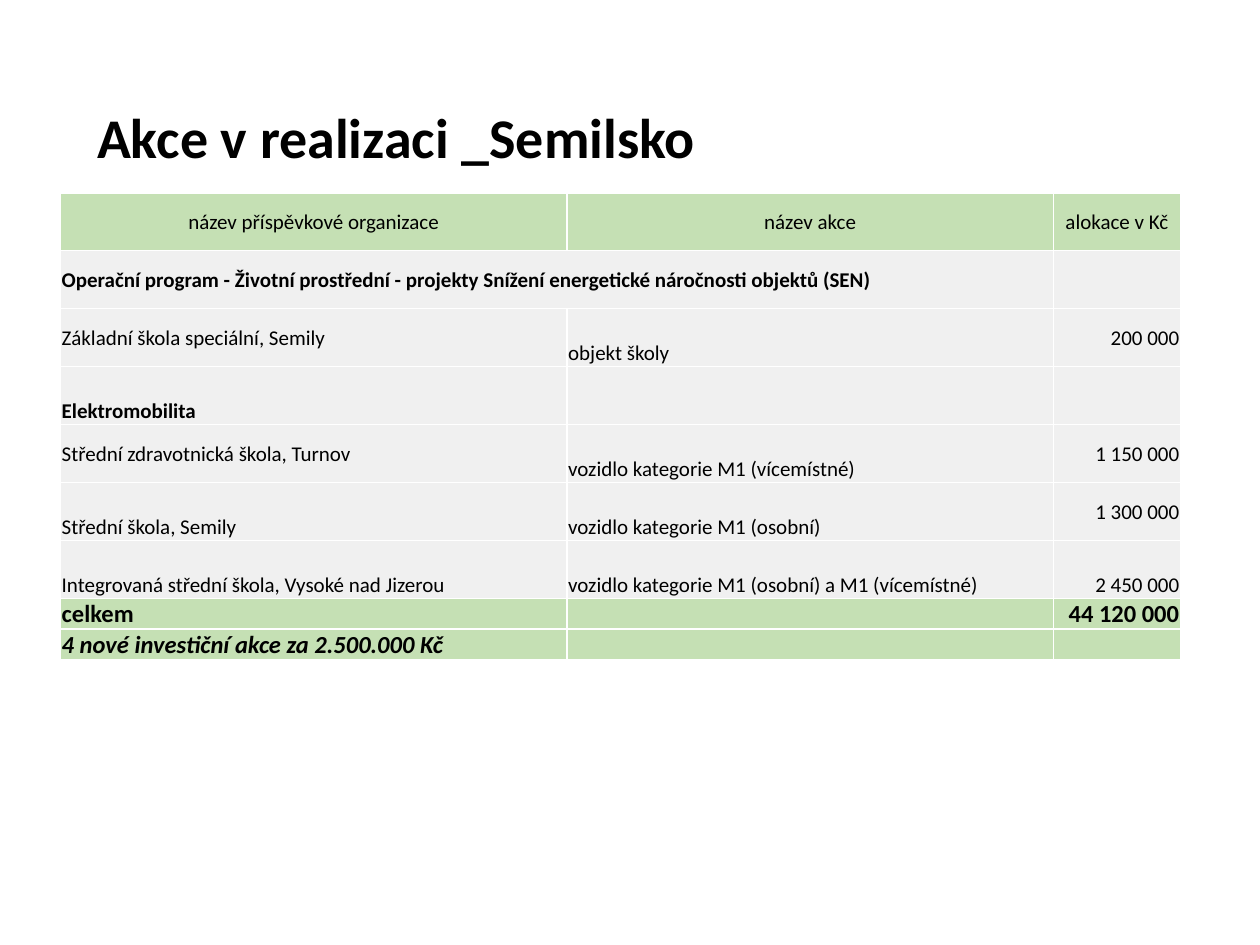
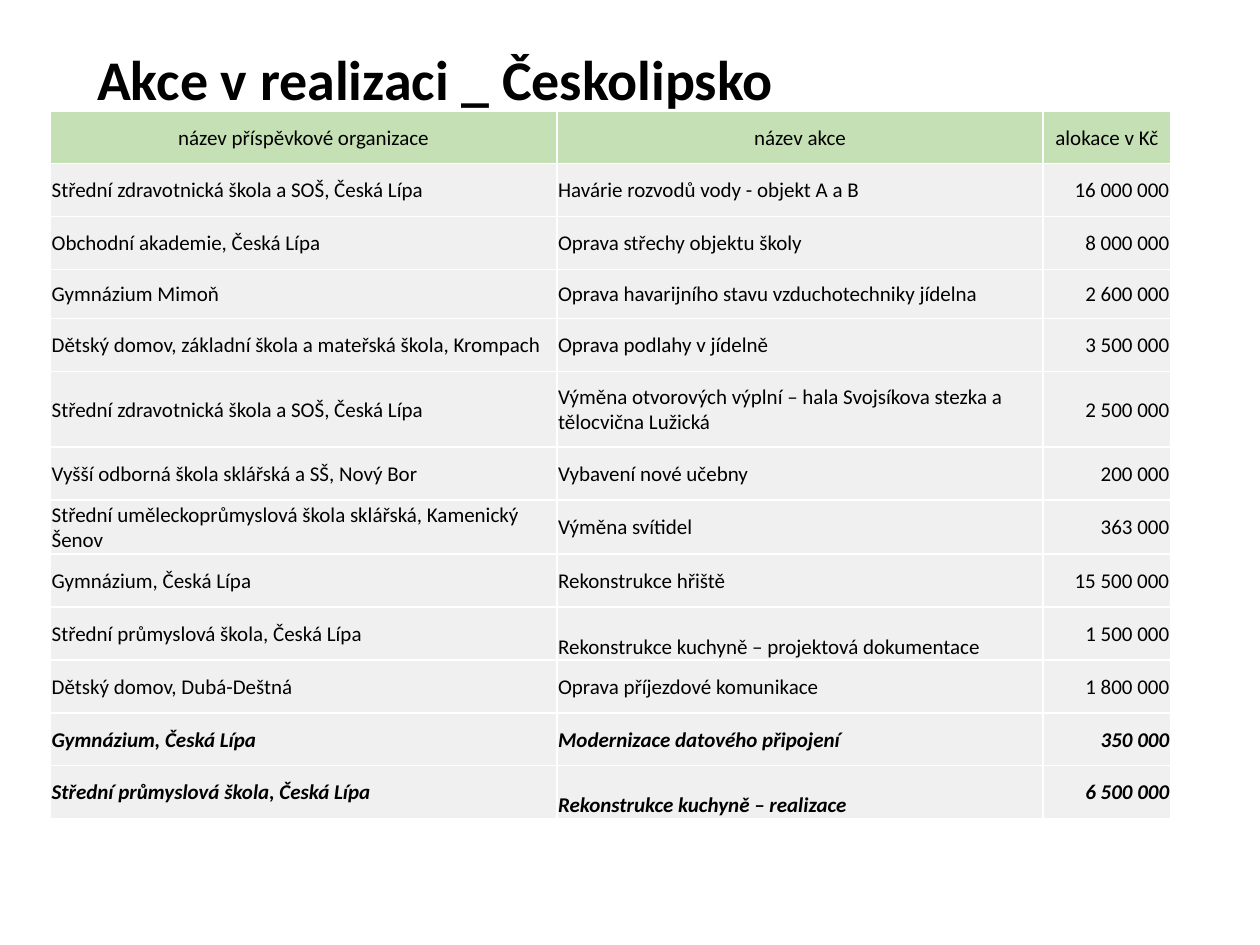
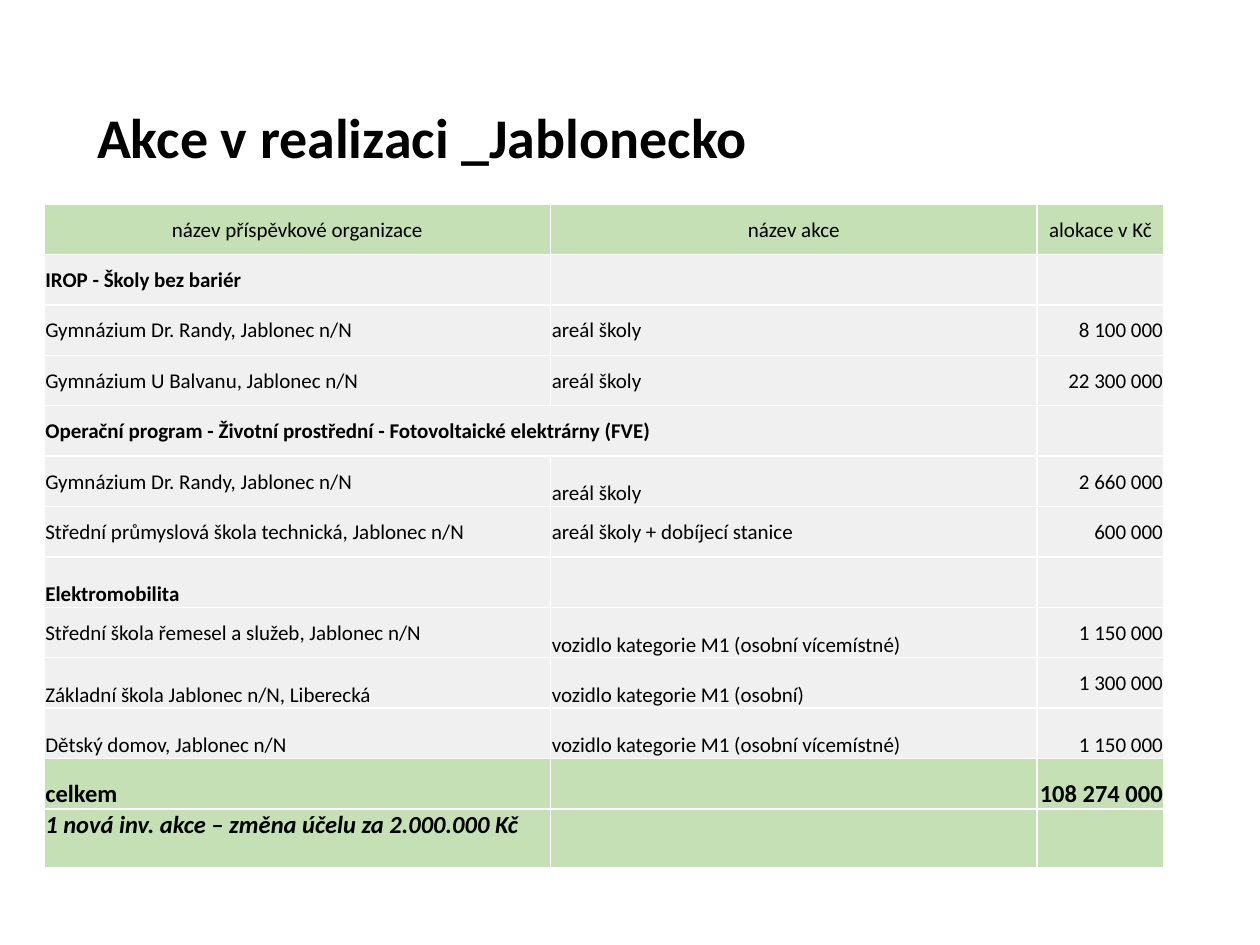
import dataclasses

import lxml.etree
import pptx
import pptx.dml.color
import pptx.enum.text
import pptx.oxml.ns
import pptx.util

Inches = pptx.util.Inches
Pt = pptx.util.Pt
Align = pptx.enum.text.PP_ALIGN
Anchor = pptx.enum.text.MSO_ANCHOR
qn = pptx.oxml.ns.qn

# Shared look
FONT = "Calibri"
GREEN, GREY, WHITE, BLACK = "C5E0B4", "F0F0F0", "FFFFFF", "000000"
COLUMNS = (4.02, 3.86, 1.01)
COLUMN_ALIGN = (Align.LEFT, Align.LEFT, Align.RIGHT)
ANCHORS = {"t": Anchor.TOP, "m": Anchor.MIDDLE, "b": Anchor.BOTTOM}
CELL_MARGINS = {
    "margin_left": Inches(0.01),
    "margin_top": Inches(0.01),
    "margin_right": Inches(0.01),
    "margin_bottom": 0,
}

# Row kinds: fill colour and font values
ROW_STYLES = {
    "head": (GREEN, {"size": Pt(12), "bold": False, "italic": False}),
    "plain": (GREY, {"size": Pt(12), "bold": False, "italic": False}),
    "section": (GREY, {"size": Pt(12), "bold": True, "italic": False}),
    "new": (GREY, {"size": Pt(12), "bold": True, "italic": True}),
    "total": (GREEN, {"size": Pt(14), "bold": True, "italic": False}),
    "note": (GREEN, {"size": Pt(14), "bold": True, "italic": True}),
}


@dataclasses.dataclass
class Row:
    organisation: str
    project: str = ""
    amount: str = ""
    anchors: str = "mmm"
    kind: str = "plain"
    height: float = 0
    wide: bool = False


HEAD = Row("název příspěvkové organizace", "název akce", "alokace v Kč", kind="head")

SEMILSKO = [
    HEAD,
    Row("Operační program - Životní prostřední - projekty Snížení energetické "
        "náročnosti objektů (SEN)", kind="section", wide=True),
    Row("Základní škola speciální, Semily", "objekt školy", "200 000", "mbm"),
    Row("Elektromobilita", anchors="bbb", kind="section"),
    Row("Střední zdravotnická škola, Turnov", "vozidlo kategorie M1 (vícemístné)",
        "1 150 000", "mbm"),
    Row("Střední škola, Semily", "vozidlo kategorie M1 (osobní)", "1 300 000", "bbm"),
    Row("Integrovaná střední škola, Vysoké nad Jizerou",
        "vozidlo kategorie M1 (osobní) a M1 (vícemístné)", "2 450 000", "bbb"),
    Row("celkem", "", "44 120 000", "bbb", "total", 0.24),
    Row("4 nové investiční akce za 2.500.000 Kč", "", "", "bbb", "note", 0.24),
]

CESKOLIPSKO = [
    HEAD,
    Row("Střední zdravotnická škola a SOŠ, Česká Lípa",
        "Havárie rozvodů vody - objekt A a B", "16 000 000"),
    Row("Obchodní akademie, Česká Lípa", "Oprava střechy objektu školy", "8 000 000"),
    Row("Gymnázium Mimoň", "Oprava havarijního stavu vzduchotechniky jídelna",
        "2 600 000", height=0.39),
    Row("Dětský domov, základní škola a mateřská škola, Krompach",
        "Oprava podlahy v jídelně", "3 500 000"),
    Row("Střední zdravotnická škola a SOŠ, Česká Lípa",
        "Výměna otvorových výplní – hala Svojsíkova stezka a tělocvična Lužická",
        "2 500 000", height=0.6),
    Row("Vyšší odborná škola sklářská a SŠ, Nový Bor", "Vybavení nové učebny", "200 000"),
    Row("Střední uměleckoprůmyslová škola sklářská, Kamenický Šenov",
        "Výměna svítidel", "363 000", height=0.43),
    Row("Gymnázium, Česká Lípa", "Rekonstrukce hřiště", "15 500 000"),
    Row("Střední průmyslová škola, Česká Lípa",
        "Rekonstrukce kuchyně – projektová dokumentace", "1 500 000", "mbm"),
    Row("Dětský domov, Dubá-Deštná", "Oprava příjezdové komunikace", "1 800 000"),
    Row("Gymnázium, Česká Lípa", "Modernizace datového připojení", "350 000", kind="new"),
    Row("Střední průmyslová škola, Česká Lípa", "Rekonstrukce kuchyně – realizace",
        "6 500 000", "mbm", "new"),
]

JABLONECKO = [
    HEAD,
    Row("IROP - Školy bez bariér", kind="section"),
    Row("Gymnázium Dr. Randy, Jablonec n/N", "areál školy", "8 100 000"),
    Row("Gymnázium U Balvanu, Jablonec n/N", "areál školy", "22 300 000"),
    Row("Operační program - Životní prostřední - Fotovoltaické elektrárny (FVE)",
        kind="section", wide=True),
    Row("Gymnázium Dr. Randy, Jablonec n/N", "areál školy", "2 660 000", "mbm"),
    Row("Střední průmyslová škola technická, Jablonec n/N",
        "areál školy + dobíjecí stanice", "600 000"),
    Row("Elektromobilita", anchors="bbb", kind="section"),
    Row("Střední škola řemesel a služeb, Jablonec n/N",
        "vozidlo kategorie M1 (osobní vícemístné)", "1 150 000", "mbm"),
    Row("Základní škola Jablonec n/N, Liberecká", "vozidlo kategorie M1 (osobní)",
        "1 300 000", "bbm"),
    Row("Dětský domov, Jablonec n/N", "vozidlo kategorie M1 (osobní vícemístné)",
        "1 150 000", "bbb"),
    Row("celkem", "", "108 274 000", "bbb", "total"),
    Row("1 nová inv. akce – změna účelu za 2.000.000 Kč", "", "", "ttt", "note", 0.47),
]

# Title, title top, table left and top, usual row height, rows
SLIDES = [
    ("Akce v realizaci _Semilsko", 0.76, (0.48, 1.53), 0.46, SEMILSKO),
    ("Akce v realizaci _ Českolipsko", 0.3, (0.4, 0.88), 0.42, CESKOLIPSKO),
    ("Akce v realizaci _Jablonecko", 0.76, (0.35, 1.62), 0.4, JABLONECKO),
]


def apply(target, values):
    for name, value in values.items():
        setattr(target, name, value)


def paint(color_format, color):
    color_format.rgb = pptx.dml.color.RGBColor.from_string(color)


def add_title(slide, text, top):
    title = slide.shapes.title
    apply(title, {"left": Inches(0.67), "top": Inches(top),
                  "width": Inches(8.35), "height": Inches(0.64)})
    frame = title.text_frame
    frame.text = text
    apply(frame, {"word_wrap": True, "vertical_anchor": Anchor.TOP,
                  "auto_size": pptx.enum.text.MSO_AUTO_SIZE.SHAPE_TO_FIT_TEXT})
    heading = frame.paragraphs[0]
    heading.alignment = Align.LEFT
    font = heading.runs[0].font
    apply(font, {"name": FONT, "size": Pt(32), "bold": True})
    paint(font.color, BLACK)


def add_borders(cell):
    properties = cell._tc.get_or_add_tcPr()
    for side in ("lnL", "lnR", "lnT", "lnB"):
        line = lxml.etree.SubElement(properties, qn(f"a:{side}"), w=str(Pt(1)))
        fill = lxml.etree.SubElement(line, qn("a:solidFill"))
        lxml.etree.SubElement(fill, qn("a:srgbClr"), val=WHITE)


def fill_cell(cell, text, alignment, anchor, kind):
    background, font_values = ROW_STYLES[kind]
    add_borders(cell)
    cell.fill.solid()
    paint(cell.fill.fore_color, background)
    apply(cell, {**CELL_MARGINS, "vertical_anchor": anchor})
    paragraph = cell.text_frame.paragraphs[0]
    paragraph.alignment = alignment
    if text:
        run = paragraph.add_run()
        run.text = text
        apply(run.font, {"name": FONT, **font_values})
        paint(run.font.color, BLACK)
    else:
        # A small end mark keeps empty cells from stretching the row
        lxml.etree.SubElement(paragraph._p, qn("a:endParaRPr"), sz="1200")


def add_projects(slide, left, top, row_height, rows):
    heights = [row.height or row_height for row in rows]
    table = slide.shapes.add_table(
        len(rows), len(COLUMNS), Inches(left), Inches(top),
        Inches(sum(COLUMNS)), Inches(sum(heights))).table
    apply(table, {"first_row": False, "horz_banding": False})
    for column, width in zip(table.columns, COLUMNS):
        column.width = Inches(width)
    for index, (row, height) in enumerate(zip(rows, heights)):
        table.rows[index].height = Inches(height)
        texts = (row.organisation, row.project, row.amount)
        for column, text in enumerate(texts):
            alignment = Align.CENTER if row.kind == "head" else COLUMN_ALIGN[column]
            fill_cell(table.cell(index, column), text, alignment,
                      ANCHORS[row.anchors[column]], row.kind)
        if row.wide:
            table.cell(index, 0).merge(table.cell(index, 1))


def main():
    deck = pptx.Presentation()
    apply(deck, {"slide_width": Inches(10), "slide_height": Inches(7.5)})
    title_only = deck.slide_layouts[5]
    for title, title_top, (left, top), row_height, rows in SLIDES:
        slide = deck.slides.add_slide(title_only)
        add_title(slide, title, title_top)
        add_projects(slide, left, top, row_height, rows)
    deck.save("out.pptx")


if __name__ == "__main__":
    main()
